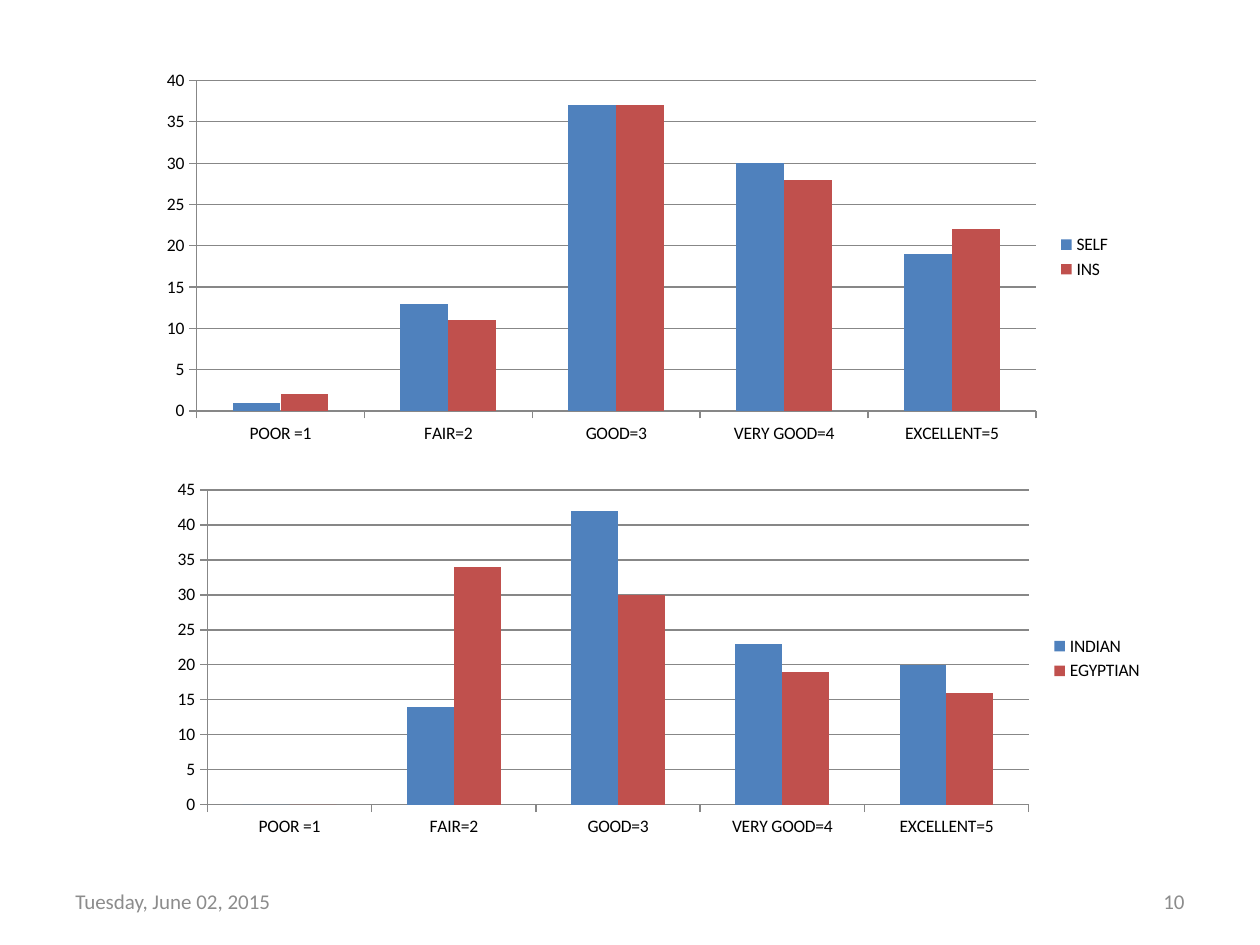
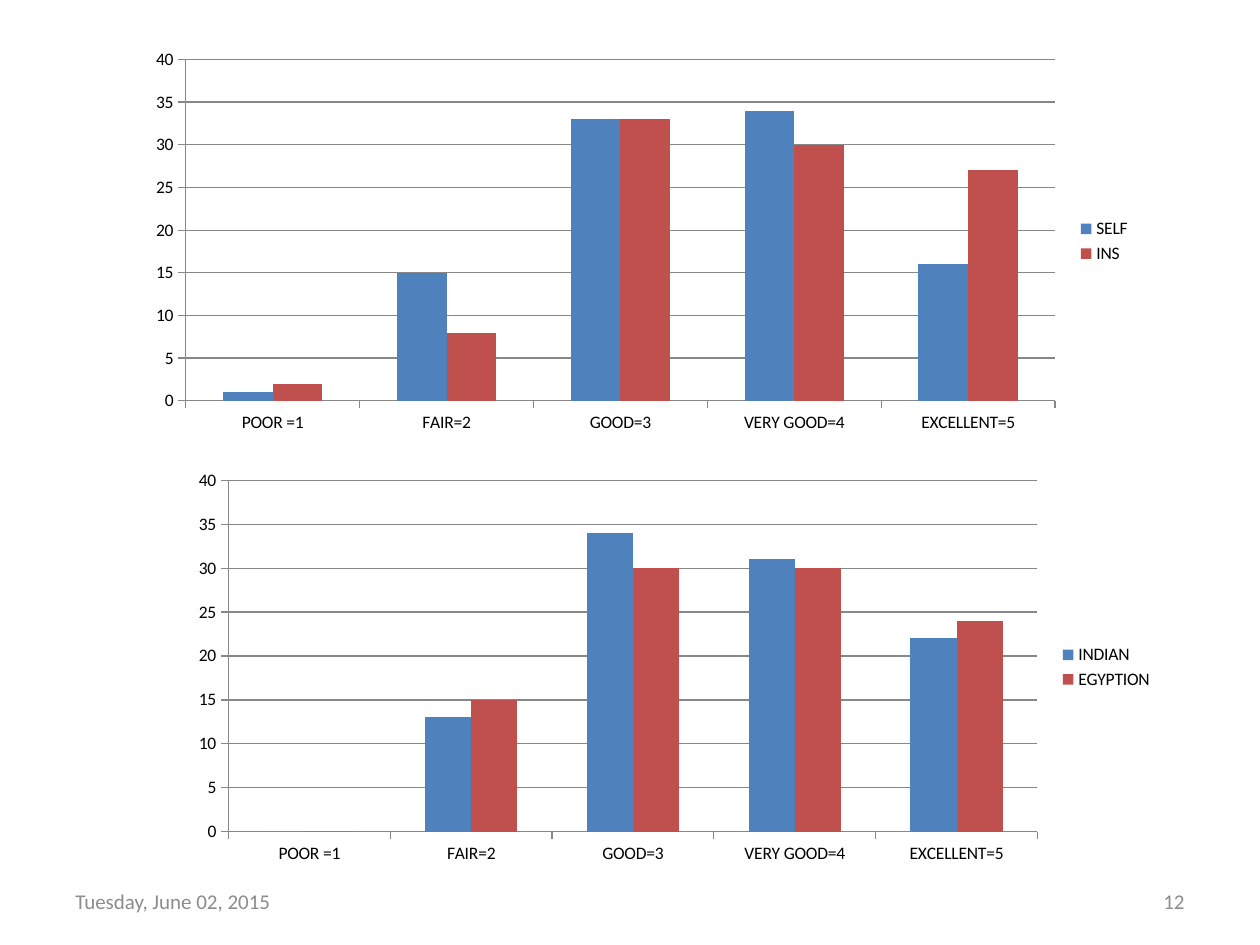
from pptx import Presentation
from pptx.chart.data import CategoryChartData
from pptx.dml.color import RGBColor
from pptx.enum.chart import XL_CHART_TYPE as ChartType, XL_LEGEND_POSITION as LegendSide, XL_TICK_MARK as Tick
from pptx.enum.text import MSO_ANCHOR as Anchor, PP_ALIGN as Align
from pptx.util import Cm, Pt

RATINGS = ["POOR =1", "FAIR=2", "GOOD=3", "VERY GOOD=4", "EXCELLENT=5"]
DATE = "Tuesday, June 02, 2015"
SLIDES = [
    {"number": "10", "charts": [
        {"box": (2.97, 1.27, 19.69, 7.82), "top": 40,
         "scores": {"SELF": (1, 13, 37, 30, 19), "INS": (2, 11, 37, 28, 22)}},
        {"box": (3.18, 9.53, 20.12, 7.49), "top": 45,
         "scores": {"INDIAN": (0, 14, 42, 23, 20), "EGYPTIAN": (0, 34, 30, 19, 16)}},
    ]},
    {"number": "12", "charts": [
        {"box": (2.74, 0.84, 20.32, 8.05), "top": 40,
         "scores": {"SELF": (1, 15, 33, 34, 16), "INS": (2, 8, 33, 30, 27)}},
        {"box": (3.61, 9.32, 19.89, 8.26), "top": 40,
         "scores": {"INDIAN": (0, 13, 34, 31, 22), "EGYPTION": (0, 15, 30, 30, 24)}},
    ]},
]

COLORS = {"first": "4F81BD", "second": "C0504D", "grid": "878787",
          "label": "000000", "footer": "8C8C8C"}
FONT = "Calibri"
WIDTH, HEIGHT, MARGIN = 25.4, 19.05, 1.27
FOOTER_TOP, FOOTER_WIDTH, FOOTER_HEIGHT = 17.65, 5.93, 1.02


def color(name):
    return RGBColor.from_string(COLORS[name])


def style_font(font, size, ink):
    font.name, font.size = FONT, Pt(size)
    font.color.rgb = color(ink)


def add_text(slide, text, *, left, top, width, height, size=12, ink="footer", align=Align.LEFT):
    frame = slide.shapes.add_textbox(Cm(left), Cm(top), Cm(width), Cm(height)).text_frame
    frame.word_wrap = True
    frame.vertical_anchor = Anchor.MIDDLE
    paragraph = frame.paragraphs[0]
    paragraph.alignment = align
    run = paragraph.add_run()
    run.text = text
    style_font(run.font, size, ink)


def style_line(line):
    line.color.rgb = color("grid")
    line.width = Pt(0.75)


def add_ratings_chart(slide, box, top, scores):
    data = CategoryChartData(number_format="General")
    data.categories = RATINGS
    for group, values in scores.items():
        data.add_series(group, values)
    chart = slide.shapes.add_chart(ChartType.COLUMN_CLUSTERED, *map(Cm, box), data).chart
    style_font(chart.font, 10, "label")
    chart.has_title = False
    chart.has_legend = True
    chart.legend.position = LegendSide.RIGHT
    chart.legend.include_in_layout = False

    plot = chart.plots[0]
    plot.gap_width, plot.overlap = 150, 0
    plot.vary_by_categories = False
    for series, ink in zip(plot.series, ("first", "second")):
        series.invert_if_negative = False
        series.format.fill.solid()
        series.format.fill.fore_color.rgb = color(ink)

    for axis in (chart.category_axis, chart.value_axis):
        axis.major_tick_mark, axis.minor_tick_mark = Tick.OUTSIDE, Tick.NONE
        style_line(axis.format.line)
    scale = chart.value_axis
    scale.minimum_scale, scale.maximum_scale, scale.major_unit = 0, top, 5
    scale.has_major_gridlines = True
    style_line(scale.major_gridlines.format.line)


def add_footer(slide, number):
    row = {"top": FOOTER_TOP, "width": FOOTER_WIDTH, "height": FOOTER_HEIGHT}
    add_text(slide, DATE, left=MARGIN, **row)
    add_text(slide, number, left=WIDTH - MARGIN - FOOTER_WIDTH, align=Align.RIGHT, **row)


def main():
    deck = Presentation()
    deck.slide_width, deck.slide_height = Cm(WIDTH), Cm(HEIGHT)
    blank = deck.slide_layouts[6]
    for content in SLIDES:
        slide = deck.slides.add_slide(blank)
        for ratings in content["charts"]:
            add_ratings_chart(slide, **ratings)
        add_footer(slide, content["number"])
    deck.save("out.pptx")


if __name__ == "__main__":
    main()
